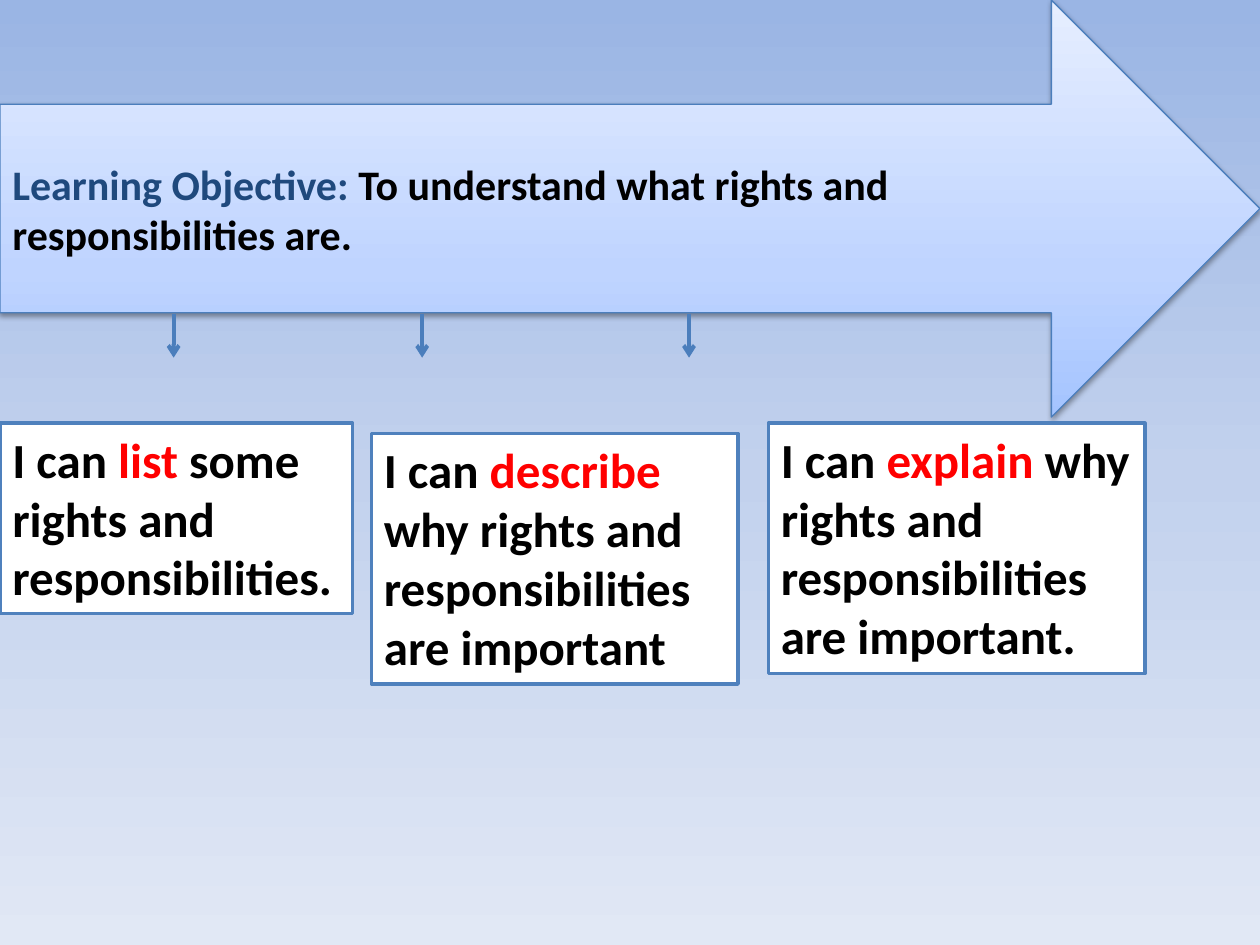
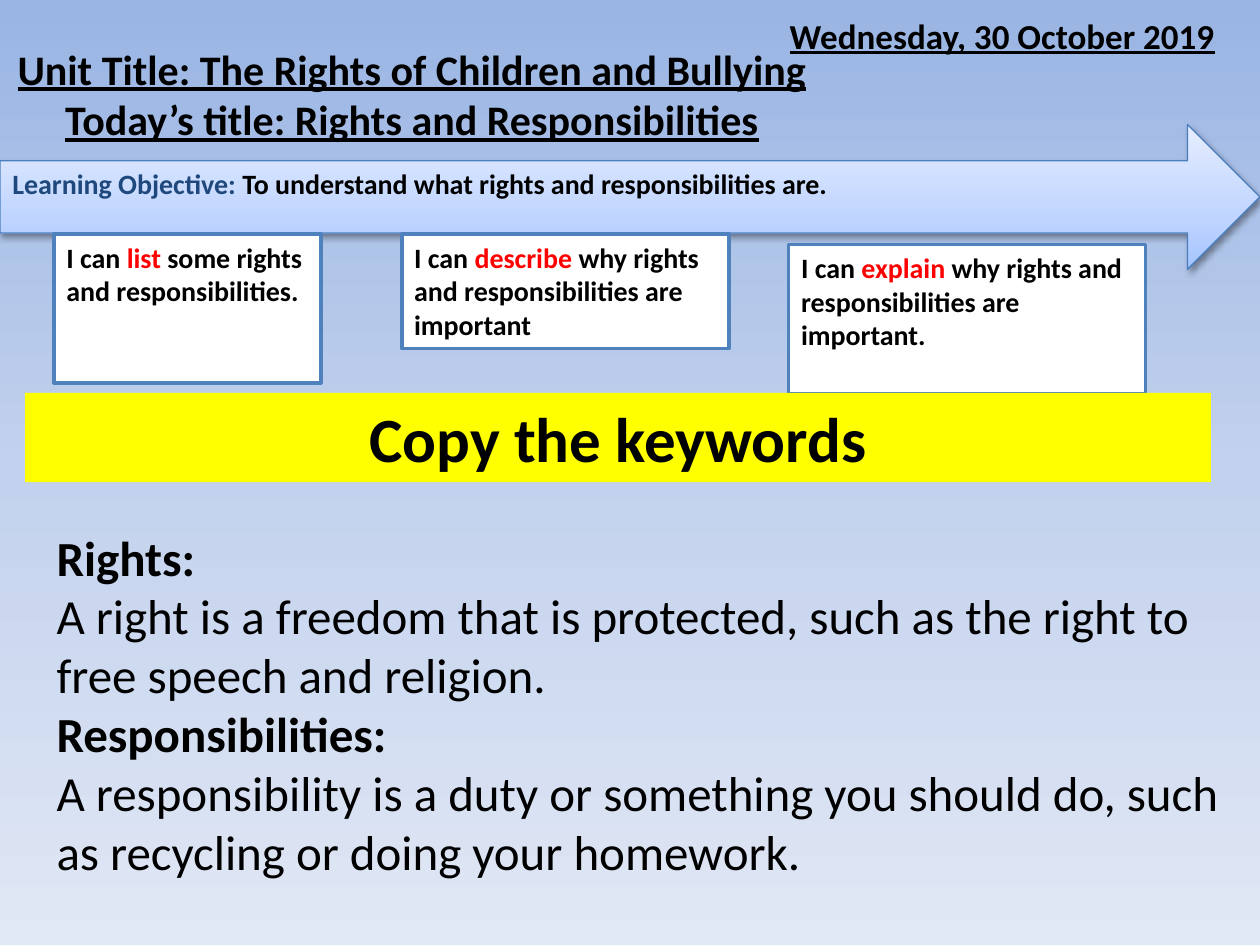
import pptx
import pptx.util
import pptx.dml.color
import pptx.enum.shapes
import pptx.enum.text
import pptx.oxml
import pptx.oxml.ns

Cm, Pt = pptx.util.Cm, pptx.util.Pt
Kind = pptx.enum.shapes.MSO_SHAPE
Anchor = pptx.enum.text.MSO_ANCHOR
Align = pptx.enum.text.PP_ALIGN

FONT = "Calibri"
HEX = {
    "black": "000000", "white": "FFFFFF", "red": "FF0000",
    "navy": "1F497D", "edge": "4F81BD", "line": "4B7EBC",
    "yellow": "FFFF00",
}
SKY = [(0, "9AB5E4"), (50, "C2D1ED"), (100, "E1E8F5")]
GLOW = [(0, "A4C4FF"), (35, "BFD4FF"), (100, "E6EEFF")]

GOAL = [("Learning Objective: ", "navy"),
        ("To understand what rights and responsibilities are.", "black")]
AIMS = [
    [("I can", "black"), (" list ", "red"),
     ("some rights and responsibilities.", "black")],
    [("I can ", "black"), ("describe", "red"),
     (" why rights and responsibilities are important", "black")],
    [("I can ", "black"), ("explain ", "red"),
     ("why rights and responsibilities are important.", "black")],
]
TERMS = [
    ("Rights:", "A right is a freedom that is protected, such as the right "
     "to free speech and religion."),
    ("Responsibilities:", "A responsibility is a duty or something you should "
     "do, such as recycling or doing your homework."),
]


def color(name):
    return pptx.dml.color.RGBColor.from_string(HEX[name])


def xml(text):
    space = pptx.oxml.ns.nsdecls("a")
    return pptx.oxml.parse_xml(text.replace("/>", f" {space}/>", 1)
                               if text.count("<") == 1
                               else text.replace(">", f" {space}>", 1))


def blend(fill, root, stops, angle):
    """Give fill, which lies inside root, a linear gradient."""
    fill.gradient()
    fill.gradient_angle = angle
    bag = next(root.iter(pptx.oxml.ns.qn("a:gsLst")))
    for old in list(bag):
        bag.remove(old)
    for place, tint in stops:
        bag.append(xml(f'<a:gs pos="{place * 1000}">'
                       f'<a:srgbClr val="{tint}"/></a:gs>'))


def place(item, box):
    item.left, item.top, item.width, item.height = map(Cm, box)


def write(item, lines, size, bold=True, under=None, align=Align.LEFT,
          anchor=Anchor.TOP):
    """Fill item with lines, each a list of (text, color) runs."""
    frame = item.text_frame
    frame.word_wrap = True
    frame.auto_size = pptx.enum.text.MSO_AUTO_SIZE.NONE
    frame.vertical_anchor = anchor
    for index, line in enumerate(lines):
        para = frame.add_paragraph() if index else frame.paragraphs[0]
        para.alignment = align
        for text, tint in line:
            run = para.add_run()
            run.text = text
            font = run.font
            font.name, font.size = FONT, Pt(size)
            font.bold = bold(index) if callable(bold) else bold
            font.underline = under
            font.color.rgb = color(tint)


def panel(slide, box, fill, edge=None):
    item = slide.shapes.add_shape(Kind.RECTANGLE, *map(Cm, box))
    item.shadow.inherit = False
    item.fill.solid()
    item.fill.fore_color.rgb = color(fill)
    if edge:
        item.line.color.rgb = color(edge)
        item.line.width = Pt(2)
    else:
        item.line.fill.background()
    return item


def banner(slide, top, height, size, anchor):
    """Draw the full-width arrow with the learning objective."""
    item = slide.shapes.add_shape(Kind.RIGHT_ARROW, 0, Cm(top),
                                  Cm(25.4), Cm(height))
    blend(item.fill, item.element, GLOW, 90)
    item.line.color.rgb = color("line")
    item.line.width = Pt(0.75)
    item.shadow.inherit = False
    glow = next(item.element.iter(pptx.oxml.ns.qn("a:effectLst")))
    glow.append(xml('<a:outerShdw blurRad="40000" dist="20000" dir="5400000" '
                    'rotWithShape="0"><a:srgbClr val="000000">'
                    '<a:alpha val="38000"/></a:srgbClr></a:outerShdw>'))
    write(item, [GOAL], size, anchor=anchor)


def aims(slide, boxes, size):
    for box, aim in zip(boxes, AIMS):
        write(panel(slide, box, "white", "edge"), [aim], size)


def drop(slide, x, top, end):
    """Draw a short arrow pointing down."""
    item = slide.shapes.add_connector(
        pptx.enum.shapes.MSO_CONNECTOR.STRAIGHT, Cm(x), Cm(top), Cm(x), Cm(end))
    item.line.color.rgb = color("line")
    item.line.width = Pt(2.25)
    item.line._get_or_add_ln().append(xml('<a:tailEnd type="arrow"/>'))
    item.element.spPr.append(xml("<a:effectLst/>"))


def label(slide, box, lines, size, **style):
    item = slide.shapes.add_textbox(*map(Cm, box))
    write(item, lines, size, **style)


def intro(deck):
    slide = deck.slides.add_slide(deck.slide_layouts[6])
    banner(slide, 0, 8.41, 24, Anchor.MIDDLE)
    aims(slide, [(0, 8.53, 7.11, 3.84), (7.49, 8.74, 7.39, 5.05),
                 (15.49, 8.53, 7.59, 5.05)], 28)
    for x in (3.5, 8.51, 13.89):
        drop(slide, x, 6.32, 7.21)


def words(deck):
    slide = deck.slides.add_slide(deck.slide_layouts[5])
    banner(slide, 2.51, 2.92, 16, Anchor.TOP)
    aims(slide, [(1.09, 4.72, 5.38, 3), (8.1, 4.72, 6.6, 2.31),
                 (15.9, 4.93, 7.19, 3)], 16)
    label(slide, (15.67, 0, 9.73, 1.42),
          [[("Wednesday, 30 October 2019", "black")]], 20,
          under=True, anchor=Anchor.MIDDLE)
    title = slide.shapes.title
    place(title, (0, 0.74, 16.61, 2.31))
    write(title, [[("Unit Title: The Rights of Children and Bullying", "black")],
                  [("Today’s title: Rights and Responsibilities", "black")]],
          24, under=True, align=Align.CENTER)
    task = panel(slide, (0.51, 7.92, 23.9, 1.8), "yellow")
    write(task, [[("Copy the keywords", "black")]], 36, align=Align.CENTER)
    lines = [[(text, "black")] for term in TERMS for text in term]
    label(slide, (0.89, 10.5, 24.51, 7.44), lines, 28,
          bold=lambda index: index % 2 == 0)


def main():
    deck = pptx.Presentation()
    deck.slide_width, deck.slide_height = Cm(25.4), Cm(19.05)
    master = deck.slide_master
    blend(master.background.fill, master.element, SKY, 270)
    intro(deck)
    words(deck)
    deck.save("out.pptx")


if __name__ == "__main__":
    main()
